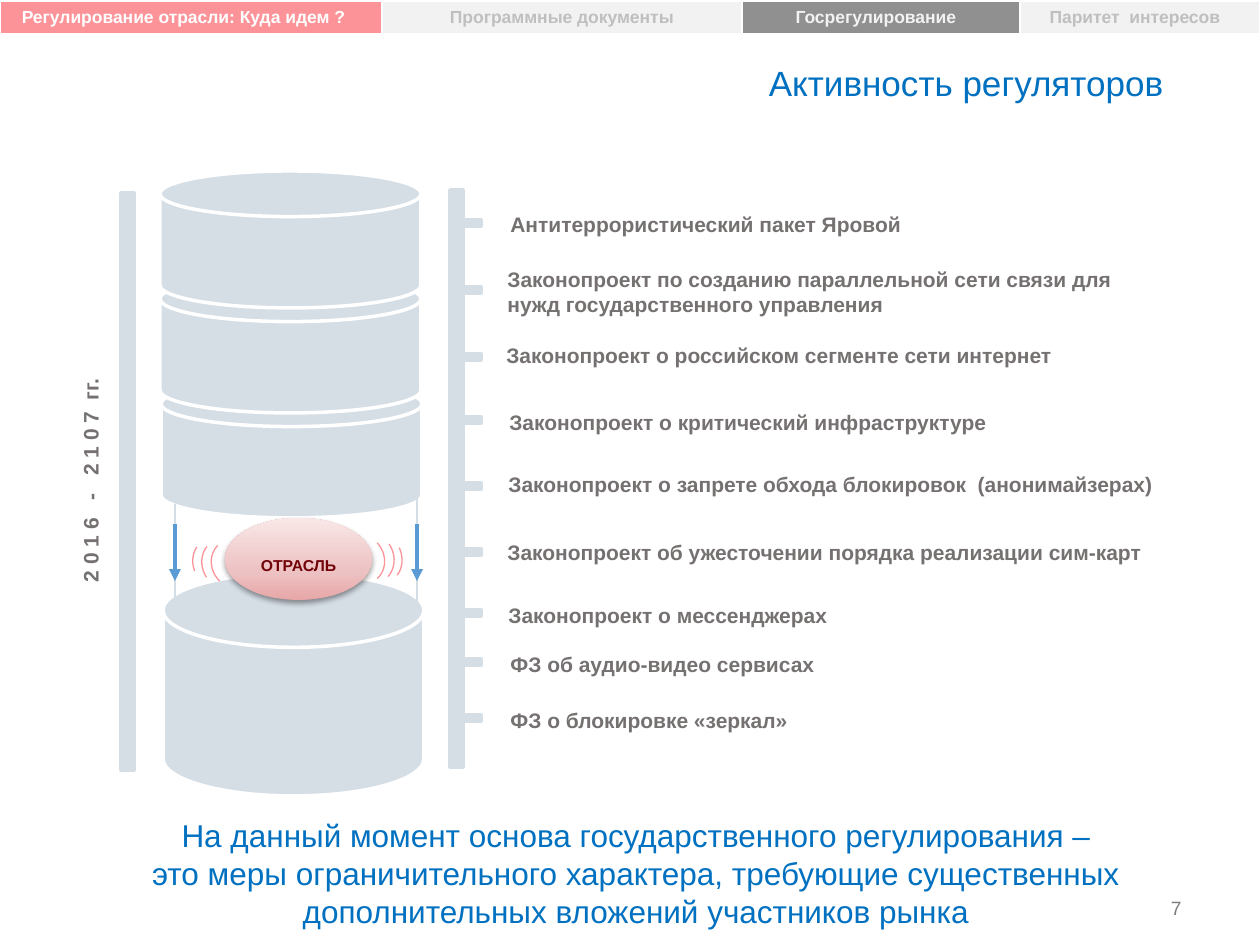
from lxml import etree
from pptx import Presentation, util as u
from pptx.dml.color import RGBColor
from pptx.enum import shapes, text
from pptx.oxml import parse_xml
from pptx.oxml.ns import qn

NS = 'xmlns:a="http://schemas.openxmlformats.org/drawingml/2006/main"'
KIND = shapes.MSO_SHAPE
ALIGN = text.PP_ALIGN
STEEL, WHITE, BLUE, GREY, PINK = "D5DDE5", "FFFFFF", "0070C0", "767171", "FC9398"


def px(n):
    return u.Emu(round(n * 914400 / 126))


def rgb(code):
    return RGBColor.from_string(code)


class Deck:
    """Holds the text style and the current slide."""
    base = {"name": "Arial", "size": 12, "bold": False}

    def __init__(self):
        self.prs = Presentation()
        self.prs.slide_width, self.prs.slide_height = px(1260), px(945)
        self.slide = self.prs.slides.add_slide(self.prs.slide_layouts[6])
        self.items = self.slide.shapes

    def put(self, frame, lines, color, align=ALIGN.LEFT, **style):
        """Fill a text frame, one paragraph a line."""
        style = {**self.base, **style}
        style["size"] = u.Pt(style["size"])
        for i, line in enumerate(lines.split("\n")):
            para = frame.add_paragraph() if i else frame.paragraphs[0]
            para.alignment = align
            run = para.add_run()
            run.text = line
            for key, value in style.items():
                setattr(run.font, key, value)
            run.font.color.rgb = rgb(color)

    def label(self, box, lines, color, wrap=True, turn=0, **style):
        item = self.items.add_textbox(*map(px, box))
        item.rotation = turn
        item.text_frame.word_wrap = wrap
        self.put(item.text_frame, lines, color, **style)

    def shape(self, kind, box, fill=None, line=None, width=2, turn=0, adj=()):
        item = self.items.add_shape(kind, *map(px, box))
        item.shadow.inherit = False
        item.rotation = turn
        for i, value in enumerate(adj):
            item.adjustments[i] = value
        if fill:
            item.fill.solid()
            item.fill.fore_color.rgb = rgb(fill)
        else:
            item.fill.background()
        if line:
            item.line.color.rgb = rgb(line)
            item.line.width = u.Pt(width)
        else:
            item.line.fill.background()
        return item

    def badge(self, box, lines, color, stops, **style):
        """Ellipse with a gradient, a soft shadow and a caption."""
        item = self.shape(KIND.OVAL, box)
        props = item._element.spPr
        marks = "".join(f'<a:gs pos="{pos}"><a:srgbClr val="{code}"/></a:gs>'
                        for pos, code in stops)
        props.replace(props.find(qn("a:noFill")), parse_xml(
            f'<a:gradFill {NS} rotWithShape="1"><a:gsLst>{marks}</a:gsLst>'
            '<a:lin ang="16200000" scaled="0"/></a:gradFill>'))
        props.find(qn("a:effectLst")).append(parse_xml(
            f'<a:outerShdw {NS} blurRad="40000" dist="20000" dir="5400000" '
            'rotWithShape="0"><a:srgbClr val="000000"><a:alpha val="38000"/>'
            '</a:srgbClr></a:outerShdw>'))
        frame = item.text_frame
        frame.vertical_anchor = text.MSO_ANCHOR.MIDDLE
        frame.margin_top, frame.margin_bottom = px(18), px(6)
        self.put(frame, lines, color, align=ALIGN.CENTER, **style)

    def line(self, x, top, end, color, width, arrow=False):
        item = self.items.add_connector(
            shapes.MSO_CONNECTOR.STRAIGHT, px(x), px(top), px(x), px(end))
        item.line.color.rgb = rgb(color)
        item.line.width = u.Pt(width)
        if arrow:
            etree.SubElement(item.line._get_or_add_ln(), qn("a:tailEnd"),
                             type="triangle")
        etree.SubElement(item._element.spPr, qn("a:effectLst"))

    def tabs(self, box, cells):
        """One-row table; each cell is text, width, fill, colour, extra right margin."""
        table = self.items.add_table(1, len(cells), *map(px, box)).table
        table.first_row = table.horz_banding = False
        table.rows[0].height = px(box[3])
        for i, (words, width, fill, color, extra) in enumerate(cells):
            table.columns[i].width = px(width)
            cell = table.cell(0, i)
            cell.fill.solid()
            cell.fill.fore_color.rgb = rgb(fill)
            cell.margin_right = px(13 + extra)
            self.put(cell.text_frame, words, color, align=ALIGN.CENTER,
                     size=10, bold=True)
            for j, (side, pt) in enumerate({"L": 1, "R": 1, "T": 1, "B": 3}.items()):
                cell._tc.get_or_add_tcPr().insert(j, parse_xml(
                    f'<a:ln{side} {NS} w="{u.Pt(pt)}"><a:solidFill>'
                    f'<a:srgbClr val="{WHITE}"/></a:solidFill></a:ln{side}>'))


# tick left, tick top, text left, text top, text width, text height, text
LAWS = [
    (462, 220, 498, 205, 507, 38, "Антитеррористический пакет Яровой"),
    (461, 287, 495, 260, 630, 63, "Законопроект по созданию параллельной сети связи "
                                  "для нужд государственного управления"),
    (462, 354, 494, 336, 640, 38, "Законопроект о российском сегменте сети интернет"),
    (462, 417, 497, 403, 507, 38, "Законопроект о критический инфраструктуре"),
    (461, 483, 496, 465, 685, 38,
     "Законопроект о запрете обхода блокировок  (анонимайзерах)"),
    (463, 549, 495, 533, 667, 38,
     "Законопроект об ужесточении порядка реализации сим-карт"),
    (463, 610, 496, 596, 354, 38, "Законопроект о мессенджерах"),
    (462, 659, 498, 645, 333, 38, "ФЗ об аудио-видео сервисах"),
    (462, 715, 498, 701, 311, 38, "ФЗ о блокировке «зеркал»"),
]
# left, top, turn, angles
WAVES = [
    (210, 540, 224.8, ()),
    (200, 540, 236.7, (162, 207.27)),
    (191, 539, 236.7, (170.7, 204.78)),
    (333, 535, 47.8, ()),
    (343, 534, 59.8, (158.84, 207.27)),
    (351, 534, 59.8, (165.02, 204.78)),
]


def main():
    deck = Deck()
    disk = KIND.FLOWCHART_MAGNETIC_DISK
    deck.label((1066, 890, 128, 37), "7", "7F7F7F", align=ALIGN.RIGHT, size=11)
    deck.label((392, 55, 784, 55), "Активность регуляторов", BLUE,
               align=ALIGN.RIGHT, size=20)

    deck.shape(disk, (163, 573, 261, 223), STEEL, WHITE)
    deck.shape(disk, (161, 381, 261, 137), STEEL, WHITE)
    deck.line(175, 504, 609, STEEL, 0.75)
    deck.line(417, 496, 604, STEEL, 0.75)
    deck.badge((225, 518, 147, 82), "ОТРАСЛЬ", "720308",
               [(0, "E7A7A8"), (35000, "EDC2C3"), (100000, "F9E7E7")],
               size=9, bold=True)
    for left, top in ((160, 276), (160, 171)):
        deck.shape(disk, (left, top, 261, 137), STEEL, WHITE)
    for x in (417, 175):
        deck.line(x, 524, 581, "5B9BD5", 2.25, arrow=True)
    for left, top in ((450, 190), (121, 193)):
        deck.shape(KIND.RECTANGLE, (left, top, 13, 577), STEEL, STEEL)

    for tick, level, left, top, width, height, words in LAWS:
        deck.shape(KIND.RECTANGLE, (tick, level, 481 - tick, 6), STEEL, STEEL)
        deck.label((left, top, width, height), words, GREY, bold=True)
    for left, top, turn, adj in WAVES:
        deck.shape(KIND.ARC, (left, top, 53, 48), None, PINK, 0.75, turn, adj)

    deck.label((-28, 457, 237, 38), "2 0 1 6   -   2 1 0 7  гг.", GREY,
               wrap=False, turn=270, bold=True)
    deck.label((69, 810, 1134, 127),
               "На данный момент основа государственного регулирования –\n"
               "это меры ограничительного характера, требующие существенных\n"
               "дополнительных вложений участников рынка",
               BLUE, align=ALIGN.CENTER, size=18)
    deck.tabs((0, 1, 1260, 34), [
        ("Регулирование отрасли: Куда идем ?", 382, PINK, WHITE, 15),
        ("Программные документы", 360, "F2F2F2", "BFBFBF", 0),
        ("Госрегулирование", 278, "909090", "F2F2F2", 10),
        ("Паритет  интересов", 240, "F2F2F2", "BFBFBF", 10),
    ])
    deck.prs.save("out.pptx")


if __name__ == "__main__":
    main()
